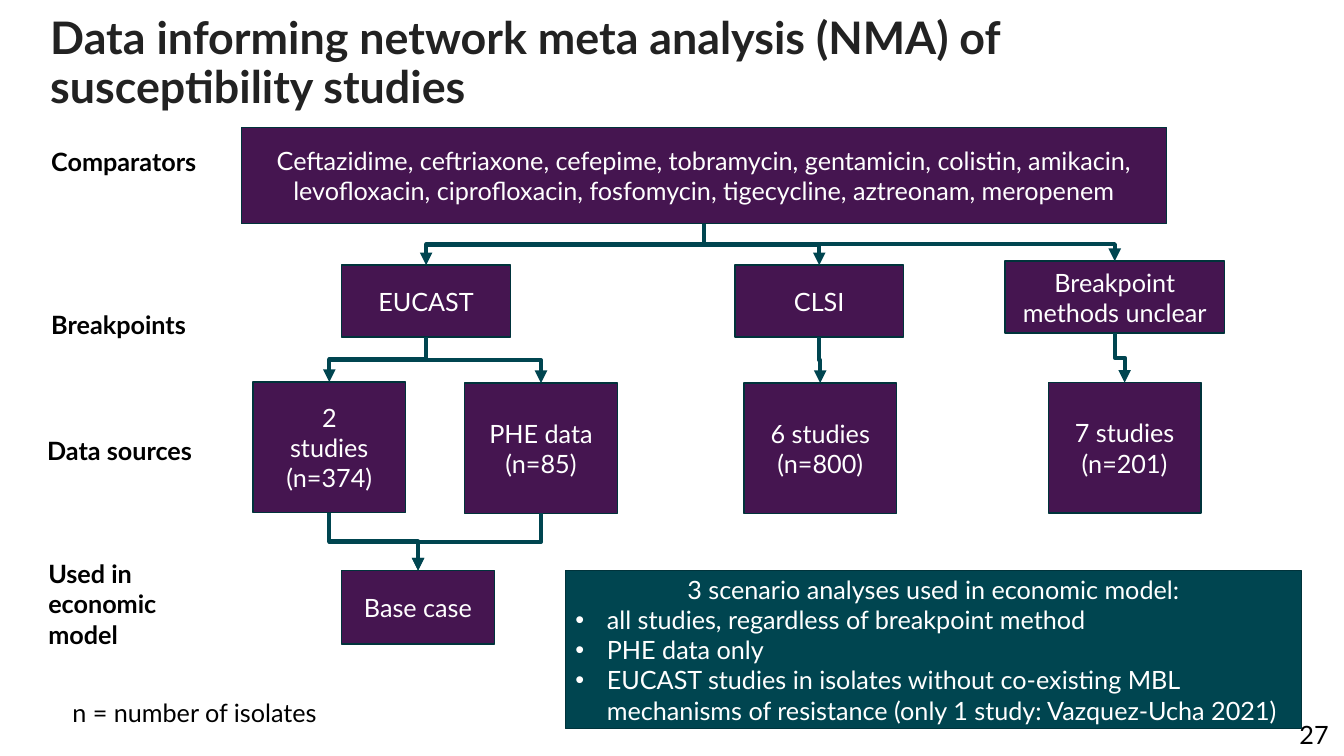
from dataclasses import dataclass
from typing import Any

from lxml.etree import SubElement
from pptx import Presentation
from pptx.dml.color import RGBColor as Color
from pptx.enum.shapes import MSO_CONNECTOR as ConnectorKind, MSO_SHAPE as ShapeKind
from pptx.enum.text import MSO_ANCHOR as Anchor, PP_ALIGN as Align
from pptx.oxml.ns import qn
from pptx.util import Pt


@dataclass(frozen=True)
class Theme:
    font: str = "Lato"
    title_size: float = 32
    body_size: float = 18
    title: str = "222222"
    text: str = "000000"
    box_text: str = "FFFFFF"
    box: str = "451550"
    accent: str = "004550"
    outline: str = "00333B"
    outline_width: float = 1
    arrow_width: float = 3


@dataclass(frozen=True)
class Label:
    text: str
    left: float
    top: float
    width: float
    height: float = 28.8
    bold: bool = False
    size: float = Theme.body_size
    color: str = Theme.text
    align: Any = Align.LEFT
    line_spacing: float = 1.0


@dataclass(frozen=True)
class Box:
    text: str
    left: float
    top: float
    width: float
    height: float
    fill: str = Theme.box
    bullets: tuple[str, ...] = ()

    @property
    def top_middle(self) -> tuple[float, float]:
        return self.left + self.width / 2, self.top

    @property
    def bottom_middle(self) -> tuple[float, float]:
        return self.left + self.width / 2, self.top + self.height


THEME = Theme()
BREAKPOINT_SIZE = (120.5, 51.4)
SOURCE_SIZE = (109, 93.2)
BULLET_INDENT = 22.5

LABELS = [
    Label("27", 823.7, 510.5, 132.5, align=Align.RIGHT),
    Label("Data informing network meta analysis (NMA) of susceptibility studies",
          28.8, 7.9, 872.6, 100.8, bold=True, size=THEME.title_size,
          color=THEME.title, line_spacing=0.9),
    Label("Comparators", 29.5, 100.8, 120.2, bold=True),
    Label("Breakpoints", 29.5, 217.4, 120.2, bold=True),
    Label("Data sources", 26.6, 307.4, 120.2, bold=True),
    Label("Used in economic model", 27.4, 395.3, 141.1, 72.7, bold=True),
    Label("n = number of isolates", 44.6, 494.6, 218.2),
]

comparators = Box(
    "Ceftazidime, ceftriaxone, cefepime, tobramycin, gentamicin, colistin, amikacin, "
    "levofloxacin, ciprofloxacin, fosfomycin, tigecycline, aztreonam, meropenem",
    172.3, 90.9, 661, 69)
eucast = Box("EUCAST", 244.1, 189.4, *BREAKPOINT_SIZE)
clsi = Box("CLSI", 524.9, 189.4, *BREAKPOINT_SIZE)
unclear = Box("Breakpoint methods unclear", 717.8, 186.5, 157, 51.4)
two_studies = Box("2\nstudies (n=374)", 180.7, 272.9, *SOURCE_SIZE)
phe_data = Box("PHE data\n(n=85)", 331.9, 273.6, *SOURCE_SIZE)
six_studies = Box("6 studies (n=800)", 531.4, 273.6, *SOURCE_SIZE)
seven_studies = Box("7 studies\n(n=201)", 748.8, 273.3, *SOURCE_SIZE)
base_case = Box("Base case", 244.1, 407.5, 109, 52.6)
scenarios = Box(
    "3 scenario analyses used in economic model:", 403.9, 407.5, 525.6, 113,
    fill=THEME.accent,
    bullets=(
        "all studies, regardless of breakpoint method",
        "PHE data only",
        "EUCAST studies in isolates without co-existing MBL mechanisms of "
        "resistance (only 1 study: Vazquez-Ucha 2021)",
    ))

BOXES = [comparators, eucast, clsi, unclear, two_studies, phe_data, six_studies,
         seven_studies, base_case, scenarios]
ARROWS = [
    (comparators, eucast), (comparators, clsi),
    (eucast, two_studies), (eucast, phe_data),
    (clsi, six_studies), (unclear, seven_studies),
    (two_studies, base_case), (phe_data, base_case),
]
UNCLEAR_BRANCH = ((474, 174.4), (796.3, 186.5))


def apply_format(target: Any, values: dict[str, Any]) -> None:
    for name, value in values.items():
        setattr(target, name, value)


def write_paragraph(paragraph: Any, text: str, size: float, color: str,
                    bold: bool = False, **layout: Any) -> None:
    apply_format(paragraph, layout)
    run = paragraph.add_run()
    run.text = text
    apply_format(run.font, {"name": THEME.font, "size": Pt(size), "bold": bold})
    run.font.color.rgb = Color.from_string(color)


def add_bullet(paragraph: Any) -> None:
    properties = paragraph._p.get_or_add_pPr()
    properties.set("marL", str(Pt(BULLET_INDENT)))
    properties.set("indent", str(-Pt(BULLET_INDENT)))
    SubElement(properties, qn("a:buFont"), typeface="Arial")
    SubElement(properties, qn("a:buChar"), char="•")


def add_label(slide: Any, label: Label) -> None:
    shape = slide.shapes.add_textbox(
        Pt(label.left), Pt(label.top), Pt(label.width), Pt(label.height))
    shape.text_frame.word_wrap = True
    write_paragraph(shape.text_frame.paragraphs[0], label.text, label.size, label.color,
                    label.bold, alignment=label.align, line_spacing=label.line_spacing)


def add_box(slide: Any, box: Box) -> None:
    shape = slide.shapes.add_shape(
        ShapeKind.RECTANGLE, Pt(box.left), Pt(box.top), Pt(box.width), Pt(box.height))
    shape.shadow.inherit = False
    shape.fill.solid()
    shape.fill.fore_color.rgb = Color.from_string(box.fill)
    shape.line.color.rgb = Color.from_string(THEME.outline)
    shape.line.width = Pt(THEME.outline_width)
    frame = shape.text_frame
    apply_format(frame, {"word_wrap": True, "vertical_anchor": Anchor.MIDDLE})
    for index, line in enumerate(box.text.split("\n")):
        paragraph = frame.add_paragraph() if index else frame.paragraphs[0]
        write_paragraph(paragraph, line, THEME.body_size, THEME.box_text,
                        alignment=Align.CENTER)
    for bullet in box.bullets:
        paragraph = frame.add_paragraph()
        write_paragraph(paragraph, bullet, THEME.body_size, THEME.box_text,
                        alignment=Align.LEFT)
        add_bullet(paragraph)


def add_elbow(slide: Any, start: tuple[float, float], end: tuple[float, float]) -> Any:
    connector = slide.shapes.add_connector(
        ConnectorKind.ELBOW, *(Pt(value) for value in (*start, *end)))
    connector.line.color.rgb = Color.from_string(THEME.accent)
    connector.line.width = Pt(THEME.arrow_width)
    SubElement(connector.line._get_or_add_ln(), qn("a:tailEnd"), type="triangle")
    SubElement(connector._element.spPr, qn("a:effectLst"))
    return connector


def add_down_arrow(slide: Any, upper: Box, lower: Box) -> None:
    """Turn a sideways elbow a quarter so that it leaves and arrives vertically."""
    (start_x, start_y), (end_x, end_y) = upper.bottom_middle, lower.top_middle
    middle_x, middle_y = (start_x + end_x) / 2, (start_y + end_y) / 2
    half_run, half_drop = abs(end_x - start_x) / 2, (end_y - start_y) / 2
    to_right = end_x > start_x
    reach = -half_drop if to_right else half_drop
    connector = add_elbow(slide, (middle_x - reach, middle_y - half_run),
                          (middle_x + reach, middle_y + half_run))
    degrees = 270 if to_right else 90
    connector._element.spPr.find(qn("a:xfrm")).set("rot", str(degrees * 60000))


def main() -> None:
    presentation = Presentation()
    apply_format(presentation, {"slide_width": Pt(960), "slide_height": Pt(540)})
    slide = presentation.slides.add_slide(presentation.slide_layouts[6])
    for label in LABELS:
        add_label(slide, label)
    for box in BOXES:
        add_box(slide, box)
    for upper, lower in ARROWS:
        add_down_arrow(slide, upper, lower)
    branch = add_elbow(slide, *UNCLEAR_BRANCH)
    branch._element.spPr.find(qn("a:prstGeom")).set("prst", "bentConnector2")
    presentation.save("out.pptx")


if __name__ == "__main__":
    main()
